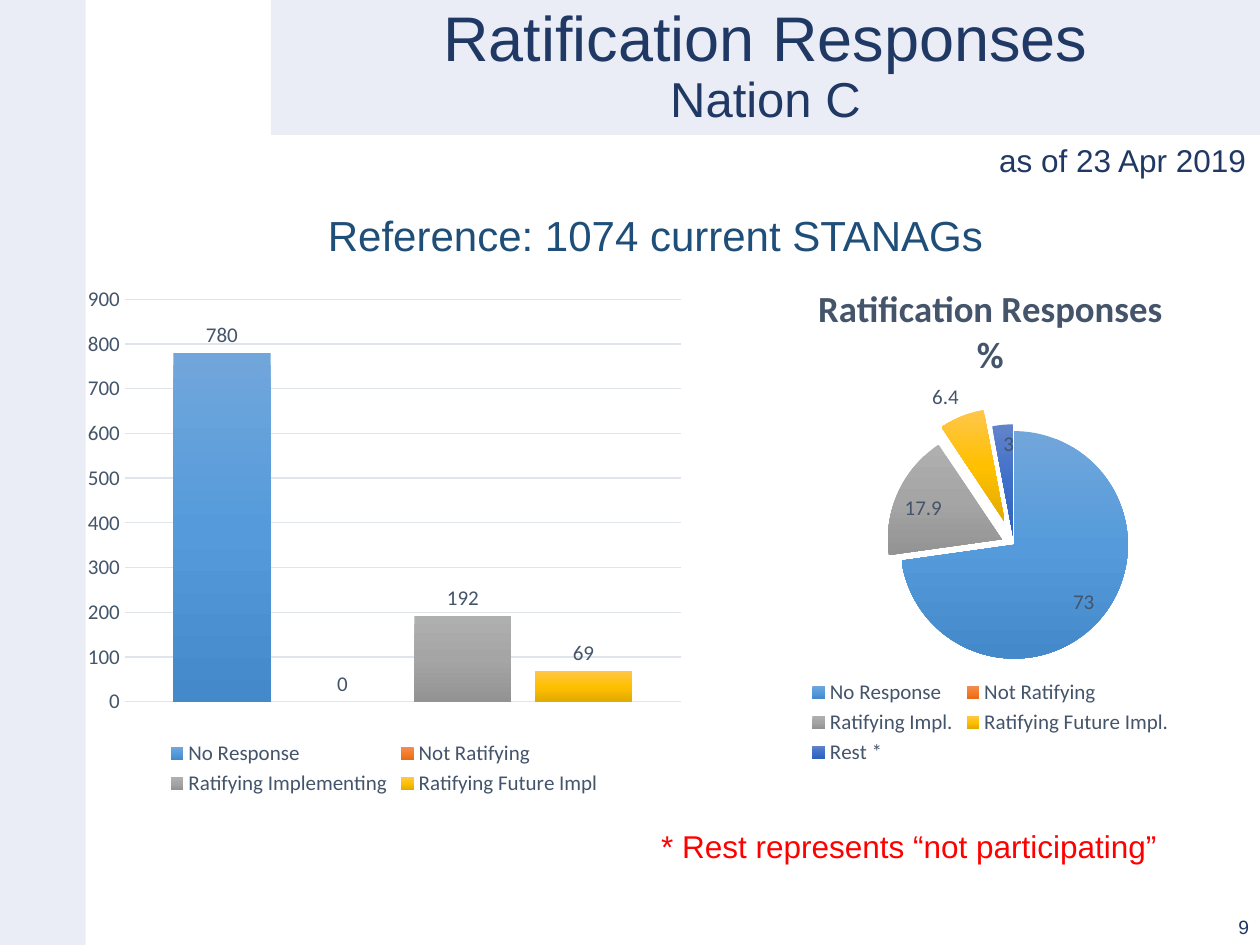
from lxml import etree
from pptx import Presentation, oxml
from pptx.chart import data as chart_data
from pptx.dml.color import RGBColor
from pptx.enum import chart as ce, shapes, text
from pptx.oxml import ns
from pptx.util import Cm, Pt

PALE = RGBColor(0xEA, 0xED, 0xF6)
NAVY = RGBColor(0x20, 0x38, 0x64)
BLUE = RGBColor(0x1F, 0x4E, 0x79)
RED = RGBColor(0xFF, 0x00, 0x00)
SLATE = RGBColor(0x44, 0x54, 0x6A)
GRID = RGBColor(0xE0, 0xE5, 0xEB)
GRADIENTS = [  # top, middle and bottom colour of each response
    [RGBColor.from_string(colour) for colour in stops.split()]
    for stops in ("71A6DB 559BDB 448ACA", "F18C57 F67B28 E56C19",
                  "AFAFAF A5A5A5 939393", "FFC64B FFC000 E3AB00",
                  "6183CB 3E70CA 3062BB")]

COUNTS = [("No Response", 780), ("Not Ratifying", 0),
          ("Ratifying Implementing", 192), ("Ratifying Future Impl", 69)]
SHARES = [("No Response", 73), ("Not Ratifying", 0), ("Ratifying Impl.", 17.9),
          ("Ratifying Future Impl.", 6.4), ("Rest *", 3)]
EXPLOSIONS = {2: 12, 3: 22, 4: 6}  # slice index: percent of the radius


def set_font(font, size, colour, name="Arial", bold=False):
    font.size, font.name, font.bold = Pt(size), name, bold
    font.color.rgb = colour


def set_chart_font(font):
    set_font(font, 12, SLATE, "Calibri")


def add_band(slide, left, top, width, height):
    """Add a pale background band behind everything else."""
    band = slide.shapes.add_shape(shapes.MSO_SHAPE.RECTANGLE,
                                  Cm(left), Cm(top), Cm(width), Cm(height))
    band.shadow.inherit = False
    band.fill.solid()
    band.fill.fore_color.rgb = PALE
    band.line.fill.background()
    slide.shapes._spTree.insert(2, band._element)


def set_title(slide, left, top, width, height):
    title = slide.shapes.title
    title.left, title.top = Cm(left), Cm(top)
    title.width, title.height = Cm(width), Cm(height)
    frame = title.text_frame
    frame.text = "Ratification Responses\vNation C"
    frame.vertical_anchor = text.MSO_ANCHOR.MIDDLE
    paragraph = frame.paragraphs[0]
    paragraph.alignment = text.PP_ALIGN.CENTER
    paragraph.line_spacing = 0.9
    for run, size in zip(paragraph.runs, (36, 28)):
        set_font(run.font, size, NAVY)


def add_text(slide, words, left, top, width, height, size, colour,
             align=text.PP_ALIGN.LEFT, anchor=text.MSO_ANCHOR.TOP, wrap=True):
    box = slide.shapes.add_textbox(Cm(left), Cm(top), Cm(width), Cm(height))
    frame = box.text_frame
    frame.word_wrap = wrap
    frame.vertical_anchor = anchor
    frame.text = words
    paragraph = frame.paragraphs[0]
    paragraph.alignment = align
    set_font(paragraph.runs[0].font, size, colour)


def fill_gradient(element, colours):
    """Fill a chart series or point element from top to bottom."""
    properties = element.get_or_add_spPr()
    stops = "".join(f'<a:gs pos="{position}"><a:srgbClr val="{colour}"/></a:gs>'
                    for position, colour in zip((0, 50000, 100000), colours))
    properties.append(oxml.parse_xml(
        f'<a:gradFill {ns.nsdecls("a")} rotWithShape="1"><a:gsLst>{stops}</a:gsLst>'
        '<a:lin ang="5400000" scaled="0"/></a:gradFill>'))


def set_plot_layout(chart, x, y, w, h):
    """Place the inner plot area, in fractions of the chart."""
    area = chart._chartSpace.chart.plotArea
    for layout in area.findall(ns.qn("c:layout")):
        area.remove(layout)
    layout = etree.Element(ns.qn("c:layout"))
    manual = etree.SubElement(layout, ns.qn("c:manualLayout"))
    settings = {"layoutTarget": "inner", "xMode": "edge", "yMode": "edge",
                "x": x, "y": y, "w": w, "h": h}
    for tag, value in settings.items():
        etree.SubElement(manual, ns.qn(f"c:{tag}")).set("val", str(value))
    area.insert(0, layout)


def add_chart(slide, kind, data, left, top, width, height):
    chart = slide.shapes.add_chart(kind, Cm(left), Cm(top), Cm(width),
                                   Cm(height), data).chart
    set_chart_font(chart.font)
    chart.has_title = False
    chart.has_legend = True
    chart.legend.position = ce.XL_LEGEND_POSITION.BOTTOM
    chart.legend.include_in_layout = False
    set_chart_font(chart.legend.font)
    return chart


def show_values(series, position):
    labels = series.data_labels
    labels.show_value = True
    labels.position = position
    set_chart_font(labels.font)
    return labels


def add_count_chart(slide):
    data = chart_data.CategoryChartData()
    data.categories = ["1"]
    for name, count in COUNTS:
        data.add_series(name, [count])
    chart = add_chart(slide, ce.XL_CHART_TYPE.COLUMN_CLUSTERED, data,
                      1.52, 5.61, 12.45, 10.54)
    set_plot_layout(chart, 0.08, 0.04, 0.9, 0.77)
    plot = chart.plots[0]
    plot.gap_width, plot.overlap = 100, -24
    plot.vary_by_categories = False
    for series, colours in zip(plot.series, GRADIENTS):
        fill_gradient(series._element, colours)
        show_values(series, ce.XL_LABEL_POSITION.OUTSIDE_END)
    chart.category_axis.visible = False
    axis = chart.value_axis
    axis.minimum_scale, axis.maximum_scale, axis.major_unit = 0, 900, 100
    axis.major_tick_mark = ce.XL_TICK_MARK.NONE
    axis.format.line.fill.background()
    axis.major_gridlines.format.line.color.rgb = GRID
    axis.major_gridlines.format.line.width = Pt(0.75)
    set_chart_font(axis.tick_labels.font)


def add_share_chart(slide):
    data = chart_data.CategoryChartData()
    data.categories = [name for name, share in SHARES]
    data.add_series("Series 1", [share for name, share in SHARES])
    chart = add_chart(slide, ce.XL_CHART_TYPE.PIE, data,
                      14.63, 5.33, 10.67, 10.19)
    set_plot_layout(chart, 0.33, 0.33, 0.43, 0.45)
    chart.has_title = True
    frame = chart.chart_title.text_frame
    frame.text = "Ratification Responses\n%"
    for paragraph in frame.paragraphs:
        set_font(paragraph.runs[0].font, 21, SLATE, "Calibri", bold=True)

    chart.plots[0].vary_by_categories = True
    series = chart.plots[0].series[0]
    for index, colours in enumerate(GRADIENTS):
        point = series._element.get_or_add_dPt_for_point(index)
        fill_gradient(point, colours)
        if index in EXPLOSIONS:
            explosion = etree.Element(ns.qn("c:explosion"))
            explosion.set("val", str(EXPLOSIONS[index]))
            point.get_or_add_spPr().addprevious(explosion)
    labels = show_values(series, ce.XL_LABEL_POSITION.INSIDE_END)
    labels.number_format = "General;;"  # leaves the zero slice unlabelled
    labels.number_format_is_linked = False
    future_label = series.points[3].data_label
    set_chart_font(future_label.font)
    future_label.position = ce.XL_LABEL_POSITION.OUTSIDE_END


def main():
    presentation = Presentation()
    presentation.slide_width, presentation.slide_height = Cm(25.4), Cm(19.05)
    slide = presentation.slides.add_slide(presentation.slide_layouts[5])
    header = (5.46, 0, 19.94, 2.72)
    add_band(slide, 0, 0, 1.73, 19.05)
    add_band(slide, *header)
    set_title(slide, *header)
    add_text(slide, "Reference: 1074 current STANAGs", 5.11, 4.09, 16.21, 1.27,
             24, BLUE, align=text.PP_ALIGN.CENTER)
    add_text(slide, "* Rest represents “not participating”",
             13.08, 16.54, 11.48, 1.02, 18, RED)
    add_text(slide, "as of 23 Apr 2019", 19.89, 2.72, 5.54, 1.02, 18, NAVY,
             wrap=False)
    add_count_chart(slide)
    add_share_chart(slide)
    add_text(slide, "9", 19.71, 18.03, 5.72, 1.02, 11, NAVY,
             align=text.PP_ALIGN.RIGHT, anchor=text.MSO_ANCHOR.BOTTOM)
    presentation.save("out.pptx")


if __name__ == "__main__":
    main()
